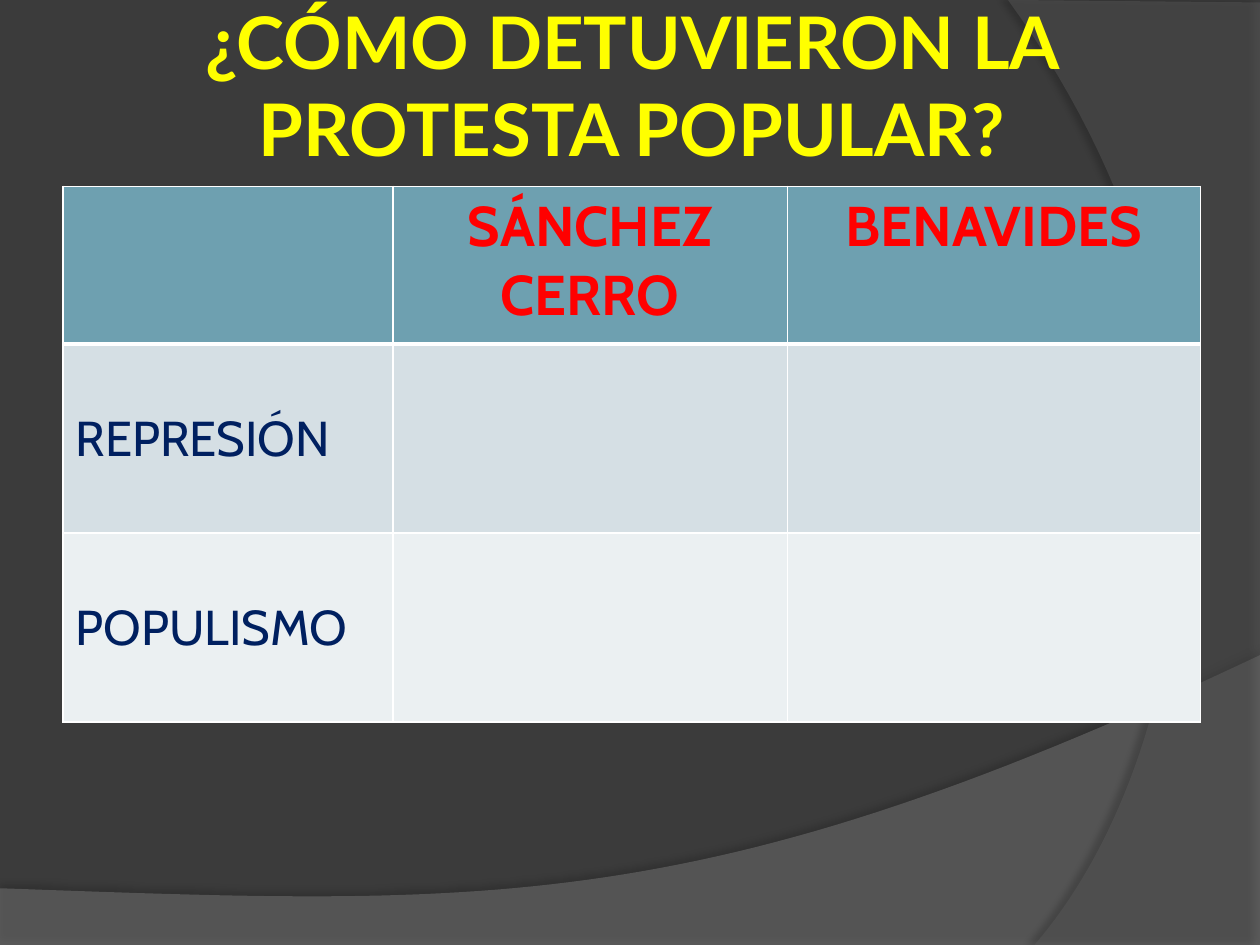
from lxml import etree
from pptx import Presentation
from pptx.dml.color import RGBColor
from pptx.enum.text import MSO_ANCHOR, PP_ALIGN
from pptx.oxml.ns import qn
from pptx.util import Inches, Pt

COLORS = {
    "background": "3B3B3B", "wave": "7F7F7F", "arc": "5E5E5E", "shadow": "000000",
    "title": "FFFF00", "border": "FFFFFF", "header": "6EA0B0", "header_text": "FF0000",
    "band_dark": "D5DFE4", "band_light": "EBF0F2", "label": "002060",
}
ROWS = [
    ["", "SÁNCHEZ CERRO", "BENAVIDES"],
    ["REPRESIÓN", "", ""],
    ["POPULISMO", "", ""],
]
ROW_FILLS = ["header", "band_dark", "band_light"]
COL_WIDTHS = [2.62, 3.13, 3.28]
ROW_HEIGHTS = [1.25, 1.5, 1.5]


def rgb(name):
    return RGBColor.from_string(COLORS[name])


def add_color(parent, name, opacity=100):
    clr = etree.SubElement(parent, qn("a:srgbClr"), val=COLORS[name])
    if opacity < 100:
        etree.SubElement(clr, qn("a:alpha"), val=str(opacity * 1000))
    return clr


def set_font(p, name, size, color, bold):
    p.font.name = name
    p.font.size = Pt(size)
    p.font.bold = bold
    p.font.color.rgb = rgb(color)


def bezier(p0, p1, p2, p3, steps=60):
    """Points along a cubic curve, without its start."""
    points = []
    for i in range(1, steps + 1):
        t = i / steps
        u = 1 - t
        weights = (u**3, 3 * u * u * t, 3 * u * t * t, t**3)
        points.append(tuple(sum(w * p[axis] for w, p in zip(weights, (p0, p1, p2, p3)))
                            for axis in (0, 1)))
    return points


def add_swoosh(s, points, color, opacity, shadow_opacity, distance, direction):
    """Translucent background outline with a soft shadow."""
    start, *rest = [(Inches(x), Inches(y)) for x, y in points]
    builder = s.shapes.build_freeform(*start)
    builder.add_line_segments(rest, close=True)
    sp = builder.convert_to_shape()
    sp.line.fill.background()
    sp.fill.solid()
    sp.fill.fore_color.rgb = rgb(color)
    clr = sp.fill._xPr.find(qn("a:solidFill")).find(qn("a:srgbClr"))
    etree.SubElement(clr, qn("a:alpha"), val=str(opacity * 1000))
    sp.shadow.inherit = False
    effects = sp._element.spPr.find(qn("a:effectLst"))
    shadow = etree.SubElement(effects, qn("a:outerShdw"), blurRad=str(Pt(4)),
                              dist=str(Pt(distance)), dir=str(direction * 60000),
                              algn="ctr", rotWithShape="0")
    add_color(shadow, "shadow", shadow_opacity)


def add_title(s, text):
    tf = s.shapes.add_textbox(Inches(0.5), 0, Inches(9.03), Inches(1.33)).text_frame
    tf.word_wrap = True
    tf.vertical_anchor = MSO_ANCHOR.MIDDLE
    tf.margin_left = tf.margin_right = tf.margin_top = tf.margin_bottom = Inches(0.05)
    p = tf.paragraphs[0]
    p.text = text
    p.alignment = PP_ALIGN.CENTER
    set_font(p, "Lato", 41.4, "title", True)


def set_borders(cell, top, bottom):
    tc_pr = cell._tc.get_or_add_tcPr()
    widths = {"a:lnL": 1, "a:lnR": 1, "a:lnT": top, "a:lnB": bottom}
    for i, (tag, width) in enumerate(widths.items()):
        ln = etree.Element(qn(tag), w=str(Pt(width)))
        add_color(etree.SubElement(ln, qn("a:solidFill")), "border")
        tc_pr.insert(i, ln)


def add_comparison(s):
    table = s.shapes.add_table(len(ROWS), len(COL_WIDTHS), Inches(0.5), Inches(1.48),
                               Inches(sum(COL_WIDTHS)), Inches(sum(ROW_HEIGHTS))).table
    for col, width in zip(table.columns, COL_WIDTHS):
        col.width = Inches(width)
    for r, texts in enumerate(ROWS):
        table.rows[r].height = Inches(ROW_HEIGHTS[r])
        for c, text in enumerate(texts):
            cell = table.cell(r, c)
            cell.fill.solid()
            cell.fill.fore_color.rgb = rgb(ROW_FILLS[r])
            set_borders(cell, top=3 if r == 1 else 1, bottom=3 if r == 0 else 1)
            p = cell.text_frame.paragraphs[0]
            p.text = text
            if r == 0:
                p.alignment = PP_ALIGN.CENTER
                set_font(p, "Cabin", 32, "header_text", True)
            else:
                cell.vertical_anchor = MSO_ANCHOR.MIDDLE
                set_font(p, "Cabin", 28, "label", False)


def main():
    prs = Presentation()
    prs.slide_width, prs.slide_height = Inches(10), Inches(7.5)
    s = prs.slides.add_slide(prs.slide_layouts[6])
    s.background.fill.solid()
    s.background.fill.fore_color.rgb = rgb("background")

    wave = [(0, 7.05), (0, 7.5), (10, 7.5), (10, 5.2)]
    wave += bezier((10, 5.2), (5.59, 7.29), (3.91, 7.19), (0, 7.05))
    add_swoosh(s, wave, "wave", 45, 35, 3.5, 270)
    arc = [(10, 0.02), (10, 7.5), (8.21, 7.5)]
    arc += bezier((8.21, 7.5), (9.35, 6.19), (10.18, 3), (8, 0))
    add_swoosh(s, arc, "arc", 40, 45, 4, 180)

    add_title(s, "¿CÓMO DETUVIERON LA PROTESTA POPULAR?")
    add_comparison(s)
    prs.save("out.pptx")


if __name__ == "__main__":
    main()
